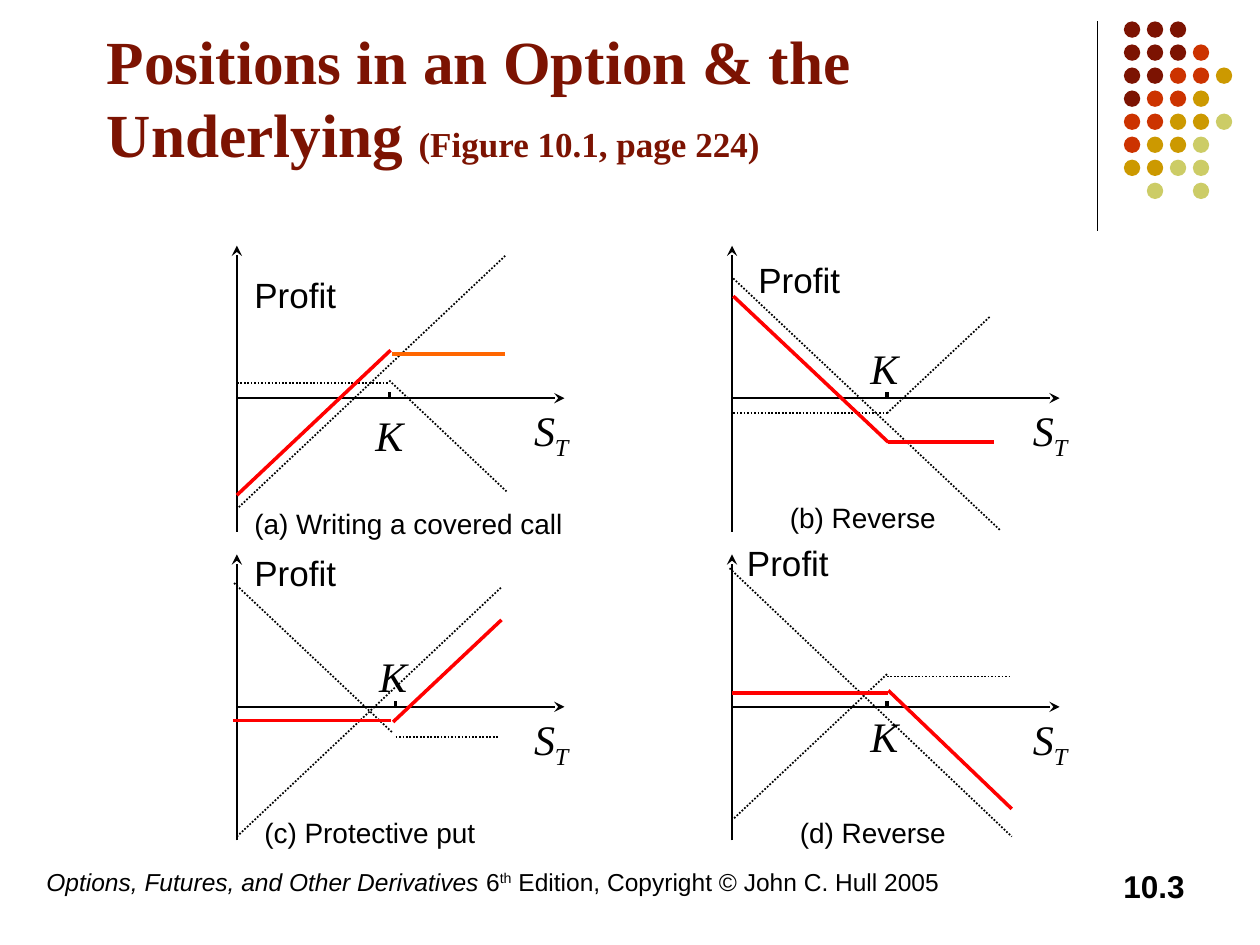
from collections import namedtuple

from lxml.etree import SubElement
from pptx import Presentation
from pptx.dml.color import RGBColor
from pptx.enum.dml import MSO_LINE_DASH_STYLE as Dash
from pptx.enum.shapes import MSO_CONNECTOR as Connector, MSO_SHAPE as Shape
from pptx.enum.text import MSO_ANCHOR as Anchor, PP_ALIGN as Align
from pptx.oxml.ns import qn
from pptx.util import Inches, Pt

Box = namedtuple("Box", "left top width height")
Panel = namedtuple("Panel", "profit strike price caption tick solid dotted")

SANS, SERIF = "Arial", "Times New Roman"
BLACK, MAROON, RED, ORANGE = "000000", "7C1302", "FF0000", "FF6600"
DOT_COLORS = {"m": MAROON, "r": "CC3300", "g": "CC9900", "l": "CCCC66"}
DOT_ROWS = ["mmm", "mmmr", "mmrrg", "mrrg", "rrggl", "rggl", "ggll", " l l"]
AXIS_DROP = 1.21

PANELS = [
    (Box(1.88, 1.95, 2.6, 2.27), Panel(
        profit=(0.04, 1.04, 1.17), strike=(1, -0.04, 0.35), price=2.26,
        caption=(0.04, -0.81, 3, "(a) Writing a covered call"), tick=1.21,
        solid=[(0, -0.77, 1.22, 0.38, RED), (1.23, 0.35, 2.13, 0.35, ORANGE)],
        dotted=[(0, 0.12, 1.21, 0.12), (1.21, 0.14, 2.14, -0.74),
                (2.13, 1.13, 0, -0.88)])),
    (Box(5.81, 1.95, 2.6, 2.27), Panel(
        profit=(0.11, 1.16, 1.17), strike=(1, 0.49, 0.42), price=2.29,
        caption=(0.36, -0.76, 2.33, "(b) Reverse"), tick=1.23,
        solid=[(1.24, -0.35, 2.08, -0.35, RED), (1.24, -0.35, 0.01, 0.81, RED)],
        dotted=[(0.01, -0.12, 1.23, -0.12), (1.23, -0.12, 2.05, 0.65),
                (0.01, 0.95, 2.13, -1.05)])),
    (Box(1.88, 4.4, 2.6, 2.27), Panel(
        profit=(0.04, 1.28, 0.92), strike=(1.03, 0.5, 0.42), price=2.26,
        caption=(0.12, -0.81, 2.83, "(c) Protective put"), tick=1.26,
        solid=[(-0.03, -0.11, 1.22, -0.11, RED), (1.24, -0.12, 2.1, 0.69, RED)],
        dotted=[(1.23, -0.2, -0.03, 0.99), (1.26, -0.24, 2.07, -0.24),
                (0, -1.03, 2.1, 0.95)])),
    (Box(5.81, 4.4, 2.6, 2.27), Panel(
        profit=(0.02, 1.36, 1.12), strike=(1, 0.02, 0.42), price=2.29,
        caption=(0.44, -0.81, 2, "(d) Reverse"), tick=1.23,
        solid=[(0, 0.11, 1.24, 0.11, RED), (2.22, -0.81, 1.24, 0.13, RED)],
        dotted=[(-0.02, 1.1, 2.22, -1.03), (1.23, 0.24, 2.2, 0.24),
                (1.23, 0.26, 0.01, -0.89)])),
]


def color(value):
    """Turn a hex string into a colour."""
    return RGBColor.from_string(value)


def add_line(page, start, end, ink=BLACK, width=1, dash=None, arrow=False):
    """Draw a straight line, with an optional stealth arrowhead at its end."""
    line = page.shapes.add_connector(
        Connector.STRAIGHT, *(Inches(value) for value in (*start, *end)))
    line.line.color.rgb = color(ink)
    line.line.width = Pt(width)
    if dash:
        line.line.dash_style = dash
    if arrow:
        SubElement(line.line._get_or_add_ln(), qn("a:tailEnd"), type="stealth")
    SubElement(line._element.spPr, qn("a:effectLst"))


def add_text(page, box, spans, font=SANS, ink=BLACK):
    """Place one paragraph of (text, size, style, baseline) spans."""
    frame = page.shapes.add_textbox(*(Inches(value) for value in box)).text_frame
    frame.word_wrap = True
    para = frame.paragraphs[0]
    for text, size, style, baseline in spans:
        span = para.add_run()
        span.text = text
        span.font.name = font
        span.font.size = Pt(size)
        span.font.color.rgb = color(ink)
        span.font.bold = "b" in style
        span.font.italic = "i" in style
        if baseline:
            span._r.get_or_add_rPr().set("baseline", str(baseline * 1000))
    return frame


def add_ornament(page, box):
    """Draw the vertical rule and the grid of coloured dots."""
    add_line(page, (box.left, box.top), (box.left, box.top + box.height), width=0.75)
    for row, codes in enumerate(DOT_ROWS):
        for column, code in enumerate(codes):
            if code == " ":
                continue
            dot = page.shapes.add_shape(
                Shape.OVAL, Inches(box.left + 0.21 + column * 0.73 / 4),
                Inches(box.top + row * 1.28 / 7), Inches(0.13), Inches(0.13))
            dot.shadow.inherit = False
            dot.fill.solid()
            dot.fill.fore_color.rgb = color(DOT_COLORS[code])
            dot.line.fill.background()


def add_title(page, box):
    """Write the slide title."""
    frame = add_text(page, box, [
        ("Positions in an Option & the Underlying ", 35, "b", 0),
        ("(Figure 10.1, page 224)", 20, "b", 0)], SERIF, MAROON)
    frame.vertical_anchor = Anchor.MIDDLE
    frame.margin_right = Inches(0.6)


def add_footer(page, box):
    """Write the source line and the page number."""
    add_text(page, Box(box.left, box.top, 8.27, box.height), [
        ("Options, Futures, and Other Derivatives", 14, "i", 0),
        (" 6", 14, "", 0), ("th", 14, "", 30),
        (" Edition, Copyright © John C. Hull 2005", 14, "", 0)])
    number = add_text(page, Box(box.left + box.width - 2.33, box.top, 2.33, box.height),
                      [("10.3", 18, "b", 0)])
    number.paragraphs[0].alignment = Align.RIGHT


def add_panel(page, box, panel):
    """Draw one profit diagram, measured from where its axes cross."""
    def at(x, y):
        return box.left + x, box.top + AXIS_DROP - y

    def label(x, y, width, height, spans, font=SANS):
        add_text(page, Box(*at(x, y), width, height), spans, font)

    add_line(page, at(0, AXIS_DROP - box.height), at(0, AXIS_DROP), arrow=True)
    add_line(page, at(0, 0), at(box.width, 0), arrow=True)
    add_line(page, at(panel.tick, 0), at(panel.tick, 0.05), width=2)
    for x1, y1, x2, y2 in panel.dotted:
        add_line(page, at(x1, y1), at(x2, y2), dash=Dash.ROUND_DOT)
    for x1, y1, x2, y2, ink in panel.solid:
        add_line(page, at(x1, y1), at(x2, y2), ink, 2)
    label(*panel.profit, 0.43, [("Profit", 20, "", 0)])
    label(*panel.strike, 0.5, [("K", 24, "i", 0)], SERIF)
    label(panel.price, 0, 0.56, 0.5, [("S", 24, "i", 0), ("T", 24, "i", -25)], SERIF)
    x, y, width, text = panel.caption
    label(x, y, width, 0.37, [(text, 16, "", 0)])


def main():
    """Build the slide and save it."""
    deck = Presentation()
    deck.slide_width, deck.slide_height = Inches(10), Inches(7.5)
    page = deck.slides.add_slide(deck.slide_layouts[6])
    add_ornament(page, Box(8.71, 0.17, 1.07, 1.66))
    add_footer(page, Box(0.27, 6.83, 9.23, 0.5))
    add_title(page, Box(0.75, 0.14, 8.5, 1.25))
    for box, panel in PANELS:
        add_panel(page, box, panel)
    deck.save("out.pptx")


if __name__ == "__main__":
    main()
